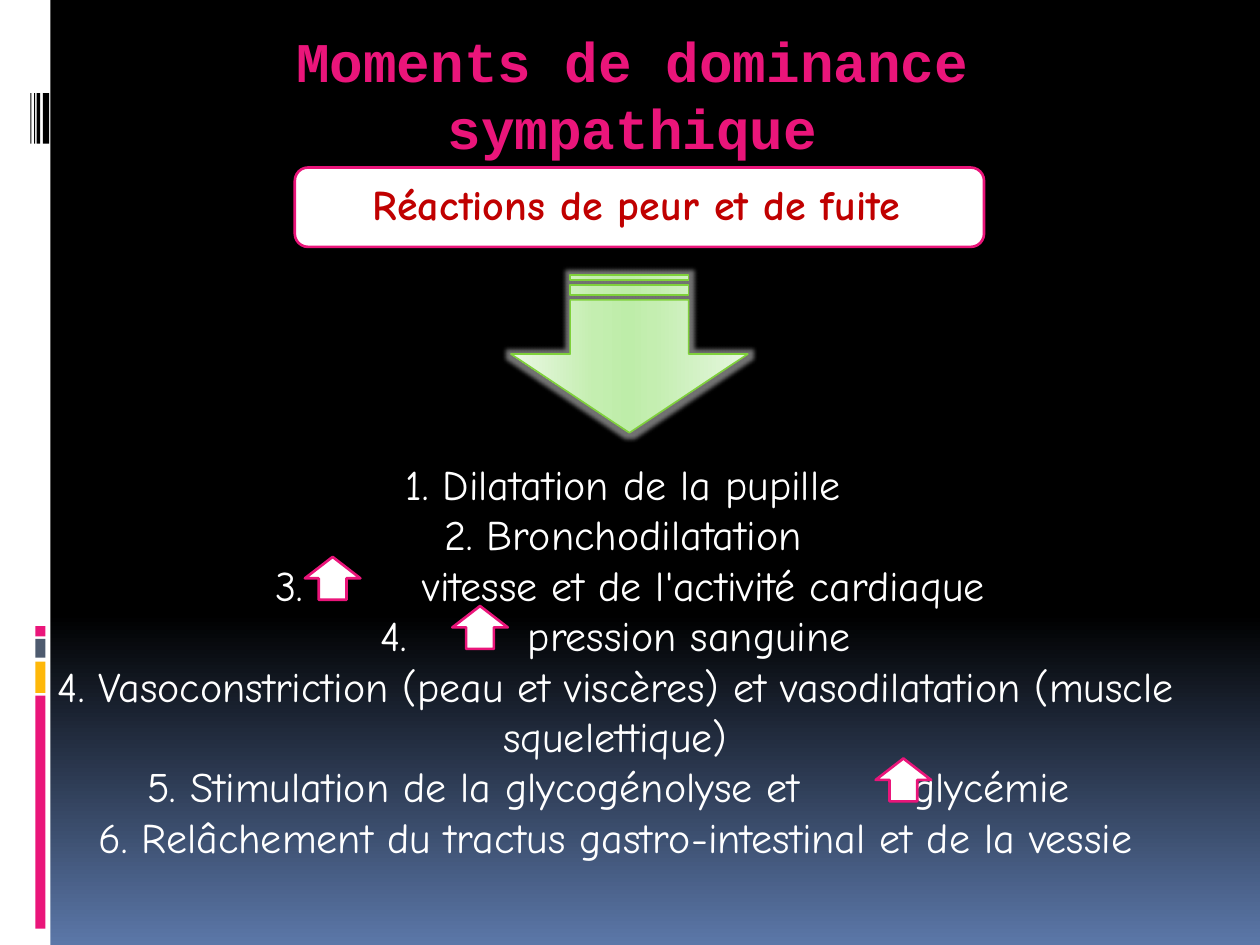
from dataclasses import dataclass

from lxml.etree import SubElement
from pptx import Presentation
from pptx.dml.color import RGBColor
from pptx.enum.shapes import MSO_SHAPE
from pptx.enum.text import PP_ALIGN
from pptx.oxml.ns import qn
from pptx.util import Inches, Pt

CELL = Inches(0.1)
COLUMNS, ROWS = 100, 75
PINK, WHITE, BLACK, RED = "EA157A", "FFFFFF", "000000", "C00000"
YELLOW, SLATE, GREEN = "FEB80A", "4E5B6F", "7FD13B"
TITLE_FONT, BODY_FONT = "Courier New", "Comic Neue"
SKY = [(0, BLACK), (65, BLACK), (100, "5B77A8")]
LEAF = [(0, "E6F7E0"), (40, "C4EEB0"), (50, "BEEDA9"), (65, "C4EEB0"), (100, "ECF8E6")]
NUMBER_INDENT = Inches(1.17)
ARROW_GAP = 57


@dataclass
class Box:
    """A region measured in grid columns and rows."""
    left: float
    top: float
    width: float
    height: float

    def inset(self, left, top, width, height):
        """Return a box placed relative to this one."""
        return Box(self.left + left, self.top + top, width, height)

    def lengths(self):
        """Return left, top, width and height as slide lengths."""
        return [round(value * CELL) for value in (self.left, self.top, self.width, self.height)]


def color(value):
    """Turn a hex string into a colour."""
    return RGBColor.from_string(value)


def fill_gradient(fill, element, stops):
    """Fill from top to bottom with the given colour stops."""
    fill.gradient()
    fill.gradient_angle = 270
    stop_list = element.find(".//" + qn("a:gsLst"))
    for stop in list(stop_list):
        stop_list.remove(stop)
    for position, value in stops:
        stop = SubElement(stop_list, qn("a:gs"), pos=str(position * 1000))
        SubElement(stop, qn("a:srgbClr"), val=value)


def add_figure(slide, kind, box, fill=WHITE, line=None, weight=1.5):
    """Add a preset shape without a shadow."""
    shape = slide.shapes.add_shape(kind, *box.lengths())
    shape.shadow.inherit = False
    shape.fill.solid()
    shape.fill.fore_color.rgb = color(fill)
    if line:
        shape.line.color.rgb = color(line)
        shape.line.width = Pt(weight)
    else:
        shape.line.fill.background()
    return shape


def add_text_frame(slide, box):
    """Add a wrapping text box and return its frame."""
    frame = slide.shapes.add_textbox(*box.lengths()).text_frame
    frame.word_wrap = True
    return frame


def write(paragraph, text, size=24, font=BODY_FONT, fill=WHITE, bold=False, spacing=0):
    """Append a formatted run to a centred paragraph."""
    paragraph.alignment = PP_ALIGN.CENTER
    run = paragraph.add_run()
    run.text = text
    run.font.size = Pt(size)
    run.font.name = font
    run.font.bold = bold
    run.font.color.rgb = color(fill)
    if spacing:
        run.font._element.set("spc", str(spacing * 100))


def number_paragraph(paragraph, start, right=0):
    """Number a paragraph, leaving room for an arrow after the number."""
    properties = paragraph._p.get_or_add_pPr()
    properties.set("marL", str(NUMBER_INDENT))
    properties.set("marR", str(Inches(right)))
    properties.set("indent", str(-NUMBER_INDENT))
    SubElement(properties, qn("a:buFont"), typeface=BODY_FONT)
    SubElement(properties, qn("a:buAutoNum"), type="arabicPeriod", startAt=str(start))


def add_side_band(slide, box):
    """Draw the white band with its barcode and coloured blocks."""
    add_figure(slide, MSO_SHAPE.RECTANGLE, box)
    for left, width in ((3.4, 0.5), (2.9, 0.3), (2.7, 0.1), (2.4, 0.1)):
        add_figure(slide, MSO_SHAPE.RECTANGLE, box.inset(left, 7.4, width, 4), BLACK)
    blocks = ((49.7, 0.8, PINK), (50.7, 1.5, SLATE), (52.5, 2.5, YELLOW), (55.2, 18.5, PINK))
    for top, height, fill in blocks:
        add_figure(slide, MSO_SHAPE.RECTANGLE, box.inset(2.8, top, 0.8, height), fill)


def add_title(slide, box):
    """Write the slide title."""
    frame = add_text_frame(slide, box)
    write(frame.paragraphs[0], "Moments de dominance sympathique",
          size=32, font=TITLE_FONT, fill=PINK, bold=True)


def add_trigger(slide, box):
    """Draw the rounded panel naming the trigger."""
    add_figure(slide, MSO_SHAPE.ROUNDED_RECTANGLE, box, line=PINK)
    frame = add_text_frame(slide, box.inset(1.8, 0.4, 50.6, 5))
    write(frame.paragraphs[0], "Réactions de peur et de fuite", fill=RED, bold=True)


def add_big_arrow(slide, box):
    """Draw the glowing striped arrow that points down."""
    arrow = add_figure(slide, MSO_SHAPE.STRIPED_RIGHT_ARROW, box, line=GREEN, weight=0.94)
    arrow.rotation = 90
    fill_gradient(arrow.fill, arrow._element, LEAF)
    effects = arrow._element.spPr.find(qn("a:effectLst"))
    glow = SubElement(effects, qn("a:glow"), rad=str(Pt(5)))
    tint = SubElement(glow, qn("a:srgbClr"), val=WHITE)
    SubElement(tint, qn("a:alpha"), val="45000")


def add_effects(slide, box):
    """List the effects and mark each increase with an arrow."""
    lines = [
        ("1. Dilatation de la pupille ",),
        ("2. Bronchodilatation ",),
        ("vitesse et de l'activité cardiaque",),
        ("pression sanguine",),
        ("4. Vasoconstriction (peau et viscères) et vasodilatation (muscle squelettique)",),
        ("5. Stimulation de la glycogénolyse et", "glycémie "),
        ("6. Relâchement du tractus gastro-intestinal et de la vessie",),
    ]
    numbered = {2: (3, 0), 3: (4, 0.23)}
    frame = add_text_frame(slide, box)
    for index, (opening, *others) in enumerate(lines):
        paragraph = frame.add_paragraph() if index else frame.paragraphs[0]
        if index in numbered:
            number_paragraph(paragraph, *numbered[index])
        write(paragraph, opening)
        for text in others:
            write(paragraph, " ", spacing=ARROW_GAP)
            write(paragraph, text)
    for left, top in ((21.1, 8.3), (32.8, 12.2), (66.4, 24.3)):
        add_figure(slide, MSO_SHAPE.UP_ARROW, box.inset(left, top, 4.4, 3.4), line=PINK)


def main():
    """Build and save the slide."""
    presentation = Presentation()
    presentation.slide_width = COLUMNS * CELL
    presentation.slide_height = ROWS * CELL
    slide = presentation.slides.add_slide(presentation.slide_layouts[6])
    fill_gradient(slide.background.fill, slide._element, SKY)
    add_side_band(slide, Box(0, 0, 4, ROWS))
    add_title(slide, Box(13.9, 1.6, 72.6, 6.4))
    add_effects(slide, Box(3.1, 35.9, 93.8, 37.4))
    add_big_arrow(slide, Box(43.7, 18.7, 12.5, 18.8))
    add_trigger(slide, Box(23.4, 13.3, 54.7, 6.3))
    presentation.save("out.pptx")


if __name__ == "__main__":
    main()
